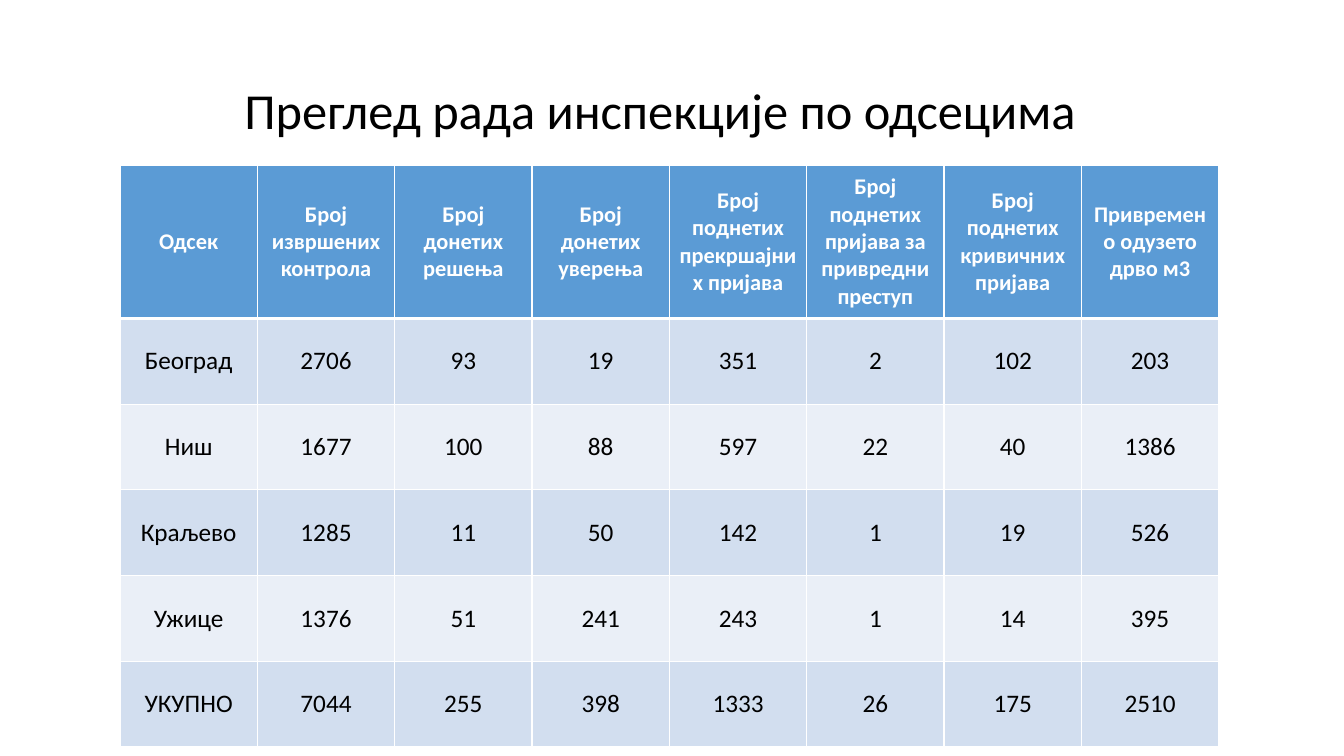
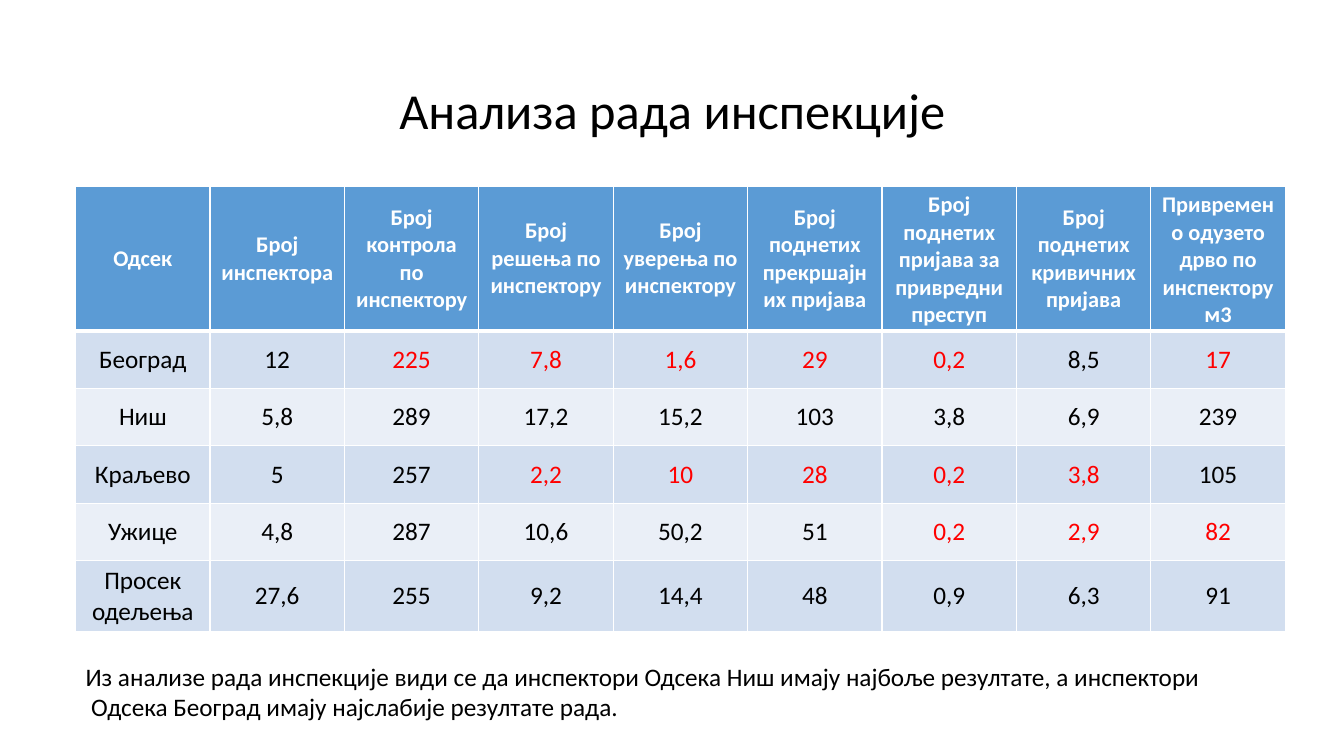
import pptx
import pptx.util
import pptx.dml.color
import pptx.enum.text
import pptx.oxml
import pptx.oxml.ns

Inches, Pt = pptx.util.Inches, pptx.util.Pt
RGBColor = pptx.dml.color.RGBColor
ALIGN = pptx.enum.text.PP_ALIGN
ANCHOR = pptx.enum.text.MSO_ANCHOR

FONT = "Calibri"
COLORS = {
    "text": "000000",
    "below_average": "FF0000",
    "header": "5B9BD5",
    "header_text": "FFFFFF",
    "border": "FFFFFF",
    "odd_row": "D2DEEF",
    "even_row": "EAEFF7",
}

# Content: the first row of each table is its header, the last its summary
OVERVIEW = {
    "title": "Преглед рада инспекције по одсецима",
    "title_left": 0.8,
    "table_at": (1.19, 1.64),
    "table_width": 10.9,
    "header_height": 1.52,
    "row_height": 0.85,
    "rows": [
        ("Одсек", "Број извршених контрола", "Број донетих решења",
         "Број донетих уверења", "Број поднетих прекршајних пријава",
         "Број поднетих пријава за привредни преступ",
         "Број поднетих кривичних пријава", "Привремено одузето дрво м3"),
        ("Београд", "2706", "93", "19", "351", "2", "102", "203"),
        ("Ниш", "1677", "100", "88", "597", "22", "40", "1386"),
        ("Краљево", "1285", "11", "50", "142", "1", "19", "526"),
        ("Ужице", "1376", "51", "241", "243", "1", "14", "395"),
        ("УКУПНО", "7044", "255", "398", "1333", "26", "175", "2510"),
    ],
}
ANALYSIS = {
    "title": "Анализа рада инспекције",
    "title_left": 0.92,
    "table_at": (0.75, 1.85),
    "table_width": 12,
    "header_height": 1.33,
    "row_height": 0.57,
    "compare_from": 2,  # columns from here on are compared with the average
    "rows": [
        ("Одсек", "Број инспектора", "Број контрола по инспектору",
         "Број решења по инспектору", "Број уверења по инспектору",
         "Број поднетих прекршајних пријава",
         "Број поднетих пријава за привредни преступ",
         "Број поднетих кривичних пријава",
         "Привремено одузето дрво по инспектору м3"),
        ("Београд", "12", "225", "7,8", "1,6", "29", "0,2", "8,5", "17"),
        ("Ниш", "5,8", "289", "17,2", "15,2", "103", "3,8", "6,9", "239"),
        ("Краљево", "5", "257", "2,2", "10", "28", "0,2", "3,8", "105"),
        ("Ужице", "4,8", "287", "10,6", "50,2", "51", "0,2", "2,9", "82"),
        ("Просек одељења", "27,6", "255", "9,2", "14,4", "48", "0,9", "6,3", "91"),
    ],
    "conclusion": [
        "Из анализе рада инспекције види се да инспектори Одсека Ниш имају најбоље резултате, а инспектори",
        " Одсека Београд имају најслабије резултате рада.",
    ],
}


def style_text(text_frame, size, color="text", bold=False, align=ALIGN.CENTER):
    for paragraph in text_frame.paragraphs:
        paragraph.alignment = align
        for run in paragraph.runs:
            run.font.name = FONT
            run.font.size = Pt(size)
            run.font.bold = bold
            run.font.color.rgb = RGBColor.from_string(COLORS[color])


def add_text(slide, text, left, top, width, height, size, **style):
    text_frame = slide.shapes.add_textbox(
        Inches(left), Inches(top), Inches(width), Inches(height)).text_frame
    text_frame.word_wrap = True
    text_frame.text = text
    style_text(text_frame, size, **style)
    return text_frame


def add_title(slide, text, left):
    text_frame = add_text(slide, text, left, 0.4, 11.5, 1.45, 36)
    text_frame.vertical_anchor = ANCHOR.MIDDLE
    text_frame.paragraphs[0].line_spacing = 0.9


def set_borders(cell, top, bottom):
    """Draw the four cell borders; must run before the cell gets its fill."""
    properties = cell._tc.get_or_add_tcPr()
    for side, points in (("L", 1), ("R", 1), ("T", top), ("B", bottom)):
        properties.append(pptx.oxml.parse_xml(
            f'<a:ln{side} {pptx.oxml.ns.nsdecls("a")} w="{Pt(points)}">'
            f'<a:solidFill><a:srgbClr val="{COLORS["border"]}"/></a:solidFill>'
            f'</a:ln{side}>'))


def number(text):
    return float(text.replace(",", "."))


def add_table(slide, content):
    rows = content["rows"]
    column_count = len(rows[0])
    heights = [content["header_height"]] + [content["row_height"]] * (len(rows) - 1)
    left, top = content["table_at"]
    table = slide.shapes.add_table(
        len(rows), column_count, Inches(left), Inches(top),
        Inches(content["table_width"]), Inches(sum(heights))).table
    for column in table.columns:
        column.width = Inches(content["table_width"] / column_count)

    compare_from = content.get("compare_from", column_count)
    for row_index, values in enumerate(rows):
        table.rows[row_index].height = Inches(heights[row_index])
        is_header = row_index == 0
        fill = "header" if is_header else "odd_row" if row_index % 2 else "even_row"
        for column_index, value in enumerate(values):
            cell = table.cell(row_index, column_index)
            set_borders(cell, top=3 if row_index == 1 else 1, bottom=3 if is_header else 1)
            cell.fill.solid()
            cell.fill.fore_color.rgb = RGBColor.from_string(COLORS[fill])
            cell.vertical_anchor = ANCHOR.MIDDLE
            cell.text_frame.text = value
            if is_header:
                style_text(cell.text_frame, 16, "header_text", bold=True)
                continue
            is_below = (column_index >= compare_from
                        and number(value) < number(rows[-1][column_index]))
            style_text(cell.text_frame, 18, "below_average" if is_below else "text")


def main():
    presentation = pptx.Presentation()
    presentation.slide_width = Inches(13.33)
    presentation.slide_height = Inches(7.5)
    for content in (OVERVIEW, ANALYSIS):
        slide = presentation.slides.add_slide(presentation.slide_layouts[6])
        add_title(slide, content["title"], content["title_left"])
        add_table(slide, content)
        if "conclusion" in content:
            add_text(slide, "\n".join(content["conclusion"]),
                     0.75, 6.51, 12, 0.71, 18, align=ALIGN.LEFT)
    presentation.save("out.pptx")


if __name__ == "__main__":
    main()
